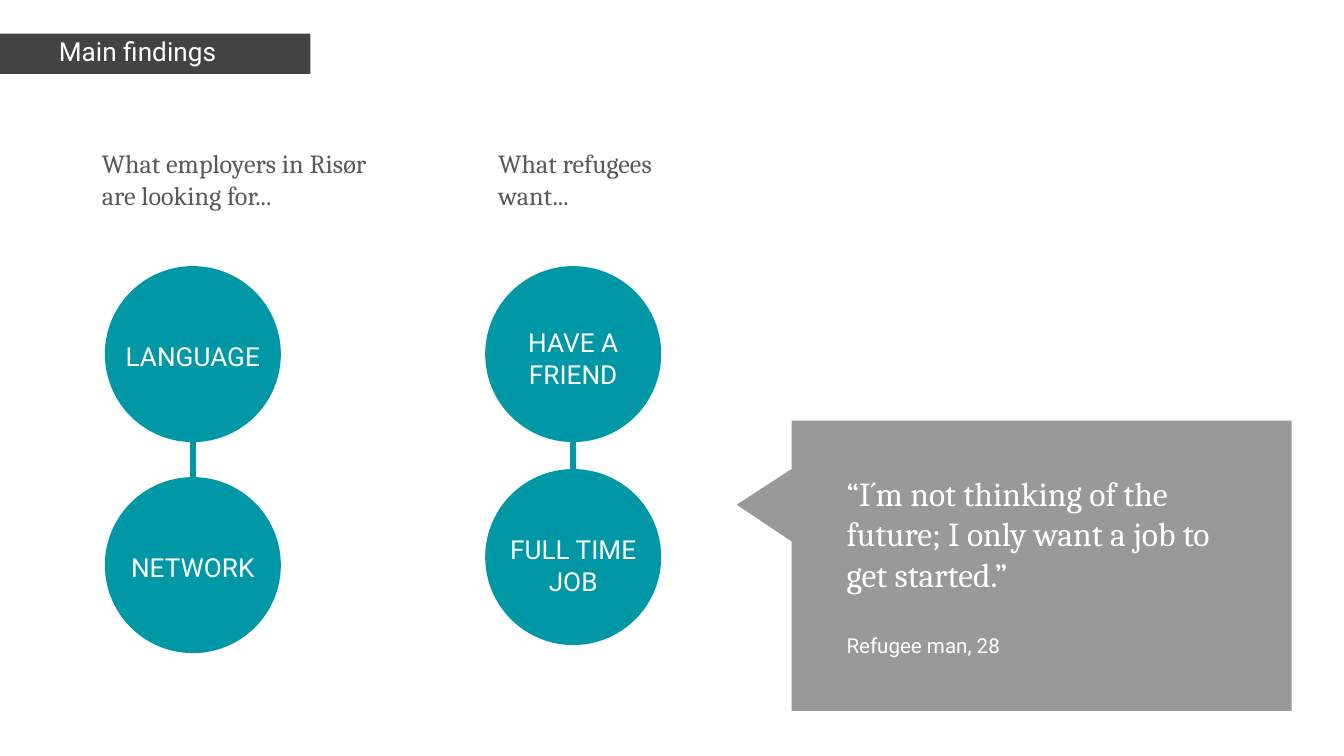
from dataclasses import dataclass

import pptx
import pptx.dml.color
import pptx.enum.shapes
import pptx.enum.text
import pptx.util
from lxml import etree
from pptx.util import Inches

SHAPES = pptx.enum.shapes.MSO_SHAPE
ALIGN = pptx.enum.text.PP_ALIGN


@dataclass(frozen=True)
class Theme:
    teal: str = "0097A7"
    dark: str = "434343"
    grey: str = "999999"
    body: str = "595959"
    white: str = "FFFFFF"
    serif: str = "Cambria"
    sans: str = "Roboto"
    normal: int = 14
    quote: int = 18
    small: int = 11
    line: int = 3


def rgb(value):
    return pptx.dml.color.RGBColor.from_string(value)


class Painter:
    def __init__(self, page, theme):
        self.page = page
        self.theme = theme

    def shape(self, kind, left, top, width, height, color):
        shape = self.page.shapes.add_shape(
            kind, Inches(left), Inches(top), Inches(width), Inches(height))
        shape.shadow.inherit = False
        shape.fill.solid()
        shape.fill.fore_color.rgb = rgb(color)
        shape.line.fill.background()
        return shape

    def text(self, left, top, width, height, paragraphs, align=ALIGN.LEFT):
        """Each paragraph is (words, font, size, color, space before)."""
        box = self.page.shapes.add_textbox(
            Inches(left), Inches(top), Inches(width), Inches(height))
        frame = box.text_frame
        frame.word_wrap = True
        for side in ("left", "top", "right", "bottom"):
            setattr(frame, f"margin_{side}", Inches(0.1))
        for index, (words, font, size, color, before) in enumerate(paragraphs):
            para = frame.add_paragraph() if index else frame.paragraphs[0]
            para.alignment = align
            para.space_before = pptx.util.Pt(before)
            span = para.add_run()
            span.text = words
            values = {"name": font, "size": pptx.util.Pt(size)}
            for name, value in values.items():
                setattr(span.font, name, value)
            span.font.color.rgb = rgb(color)

    def link(self, x, start, end):
        """Draw a vertical line between two circles."""
        line = self.page.shapes.add_connector(
            pptx.enum.shapes.MSO_CONNECTOR.STRAIGHT,
            Inches(x), Inches(start), Inches(x), Inches(end))
        line.line.color.rgb = rgb(self.theme.teal)
        line.line.width = pptx.util.Pt(self.theme.line)
        properties = line._element.spPr
        etree.SubElement(properties, pptx.oxml.ns.qn("a:effectLst"))


def draw_column(painter, circle_left, heading, circles):
    """Draw a heading above two linked circles."""
    theme = painter.theme
    diameter = 1.31
    center = circle_left + diameter / 2
    left, width, lines = heading
    painter.text(left, 1, width, 1.22, [
        (words, theme.serif, theme.normal, theme.body, 0) for words in lines])
    for top, words, label_top, label_width, label_height in circles:
        painter.shape(SHAPES.OVAL, circle_left, top, diameter, diameter, theme.teal)
        painter.text(center - label_width / 2, label_top, label_width, label_height,
                     [(words, theme.sans, theme.normal, theme.white, 0)],
                     ALIGN.CENTER)
    upper, lower = circles[0][0], circles[1][0]
    painter.link(center, lower, upper + diameter)


def main():
    deck = pptx.Presentation()
    deck.slide_width = Inches(10)
    deck.slide_height = deck.slide_width * 9 // 16
    theme = Theme()
    painter = Painter(deck.slides.add_slide(deck.slide_layouts[6]), theme)

    painter.shape(SHAPES.RECTANGLE, -0.32, 0.25, 2.63, 0.3, theme.dark)
    painter.text(0.34, 0.16, 1.97, 0.3, [
        ("Main findings", theme.sans, theme.normal, theme.white, 0)])

    draw_column(
        painter, 0.78,
        (0.66, 2.39, ["What employers in Risør are looking for..."]),
        [(1.98, "LANGUAGE", 2.43, 1.31, 0.42), (3.55, "NETWORK", 4, 1.18, 0.42)])
    draw_column(
        painter, 3.61,
        (3.61, 2.28, ["What refugees", "want..."]),
        [(1.98, "HAVE A FRIEND", 2.33, 1.18, 0.62),
         (3.49, "FULL TIME JOB", 3.87, 1.18, 0.42)])

    callout = painter.shape(
        SHAPES.RECTANGULAR_CALLOUT, 5.89, 3.13, 3.72, 2.16, theme.grey)
    callout.adjustments[0] = -0.61
    callout.adjustments[1] = -0.21
    painter.text(6.2, 3.42, 3.11, 1.57, [
        ("“I´m not thinking of the future; I only want a job to get started.”",
         theme.serif, theme.quote, theme.white, 0),
        ("Refugee man, 28", theme.sans, theme.small, theme.white, 21)])

    deck.save("out.pptx")


if __name__ == "__main__":
    main()
